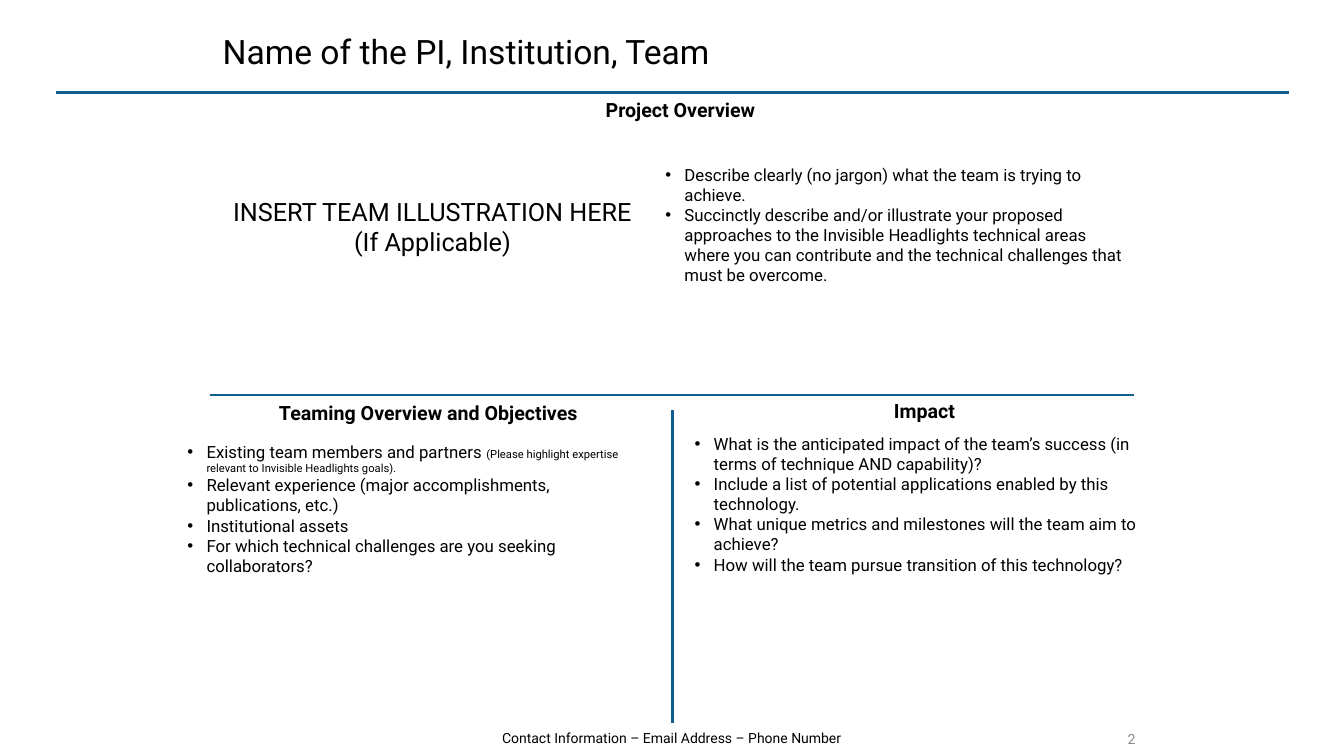
from dataclasses import dataclass

from lxml import etree
from pptx import Presentation
from pptx import util as u
from pptx.dml import color
from pptx.enum import shapes, text
from pptx.oxml import ns


@dataclass(frozen=True)
class Theme:
    font: str = "Roboto"
    ink: str = "000000"
    muted: str = "898989"
    rule: str = "0F5E90"
    rule_width: float = 1.75
    title: int = 24
    prompt: int = 18
    heading: int = 14
    body: int = 12
    footer: int = 10
    note: int = 8
    bullet_indent: float = 0.19


@dataclass(frozen=True)
class Run:
    words: str
    size: int
    bold: bool = False
    ink: str = Theme.ink


@dataclass(frozen=True)
class Block:
    left: float
    top: float
    width: float
    height: float
    paragraphs: list[list[Run]]
    align: text.PP_ALIGN = text.PP_ALIGN.LEFT
    anchor: text.MSO_ANCHOR = text.MSO_ANCHOR.TOP
    bulleted: bool = False


@dataclass(frozen=True)
class Rule:
    x1: float
    y1: float
    x2: float
    y2: float


THEME = Theme()
CENTER, RIGHT = text.PP_ALIGN.CENTER, text.PP_ALIGN.RIGHT
MIDDLE = text.MSO_ANCHOR.MIDDLE


def heading(left: float, top: float, width: float, words: str) -> Block:
    return Block(left, top, width, 0.34, [[Run(words, THEME.heading, bold=True)]], CENTER)


def bullets(left: float, top: float, height: float, items: list[list[Run]]) -> Block:
    return Block(left, top, 4.75, height, items, bulleted=True)


def body(words: str) -> list[Run]:
    return [Run(words, THEME.body)]


RULES = [
    Rule(0.56, 0.92, 12.78, 0.92),
    Rule(6.67, 4.07, 6.67, 7.17),
    Rule(2.08, 3.92, 11.25, 3.92),
]

BLOCKS = [
    # Title
    Block(2.11, 0.17, 7.81, 0.67,
          [[Run("Name of the PI, Institution, Team", THEME.title)]], anchor=MIDDLE),
    # Project overview
    heading(4.25, 0.92, 5, "Project Overview"),
    Block(1.79, 1.9, 5, 0.71, [
        [Run("INSERT TEAM ILLUSTRATION HERE", THEME.prompt)],
        [Run("(If Applicable)", THEME.prompt)],
    ], CENTER),
    bullets(6.5, 1.58, 1.31, [
        body("Describe clearly (no jargon) what the team is trying to achieve."),
        body("Succinctly describe and/or illustrate your proposed approaches to the "
             "Invisible Headlights technical areas where you can contribute and the "
             "technical challenges that must be overcome."),
    ]),
    # Teaming
    heading(2.23, 3.93, 4.04, "Teaming Overview and Objectives"),
    bullets(1.76, 4.33, 1.45, [
        body("Existing team members and partners ")
        + [Run("(Please highlight expertise relevant to Invisible Headlights goals).",
               THEME.note)],
        body("Relevant experience (major accomplishments, publications, etc.)"),
        body("Institutional assets"),
        body("For which technical challenges are you seeking collaborators?"),
    ]),
    # Impact
    heading(6.67, 3.91, 5, "Impact"),
    bullets(6.79, 4.25, 1.51, [
        body("What is the anticipated impact of the team’s success "
             "(in terms of technique AND capability)?"),
        body("Include a list of potential applications enabled by this technology."),
        body("What unique metrics and milestones will the team aim to achieve?"),
        body("How will the team pursue transition of this technology?"),
    ]),
    # Footer
    Block(3.12, 7.16, 7.08, 0.33,
          [[Run("Contact Information – Email Address – Phone Number", THEME.footer)]],
          CENTER, MIDDLE),
    Block(10.53, 7.17, 0.83, 0.32,
          [[Run("2", THEME.footer, ink=THEME.muted)]], RIGHT, MIDDLE),
]


def add_bullet(paragraph) -> None:
    properties = paragraph._p.get_or_add_pPr()
    indent = u.Inches(THEME.bullet_indent)
    properties.set("marL", str(indent))
    properties.set("indent", str(-indent))
    etree.SubElement(properties, ns.qn("a:buFont")).set("typeface", "Arial")
    etree.SubElement(properties, ns.qn("a:buChar")).set("char", "•")


def draw_rule(slide, rule: Rule) -> None:
    ends = [u.Inches(n) for n in (rule.x1, rule.y1, rule.x2, rule.y2)]
    line = slide.shapes.add_connector(shapes.MSO_CONNECTOR.STRAIGHT, *ends)
    line.line.color.rgb = color.RGBColor.from_string(THEME.rule)
    line.line.width = u.Pt(THEME.rule_width)
    etree.SubElement(line._element.spPr, ns.qn("a:effectLst"))


def draw_block(slide, block: Block) -> None:
    place = [u.Inches(n) for n in (block.left, block.top, block.width, block.height)]
    frame = slide.shapes.add_textbox(*place).text_frame
    frame.word_wrap = True
    frame.vertical_anchor = block.anchor
    for index, runs in enumerate(block.paragraphs):
        paragraph = frame.add_paragraph() if index else frame.paragraphs[0]
        paragraph.alignment = block.align
        if block.bulleted:
            add_bullet(paragraph)
        for piece in runs:
            run = paragraph.add_run()
            run.text = piece.words
            run.font.name = THEME.font
            run.font.size = u.Pt(piece.size)
            run.font.bold = piece.bold
            run.font.color.rgb = color.RGBColor.from_string(piece.ink)


def main() -> None:
    deck = Presentation()
    deck.slide_width, deck.slide_height = u.Inches(13.33), u.Inches(7.5)
    slide = deck.slides.add_slide(deck.slide_layouts[6])
    for rule in RULES:
        draw_rule(slide, rule)
    for block in BLOCKS:
        draw_block(slide, block)
    deck.save("out.pptx")


if __name__ == "__main__":
    main()
